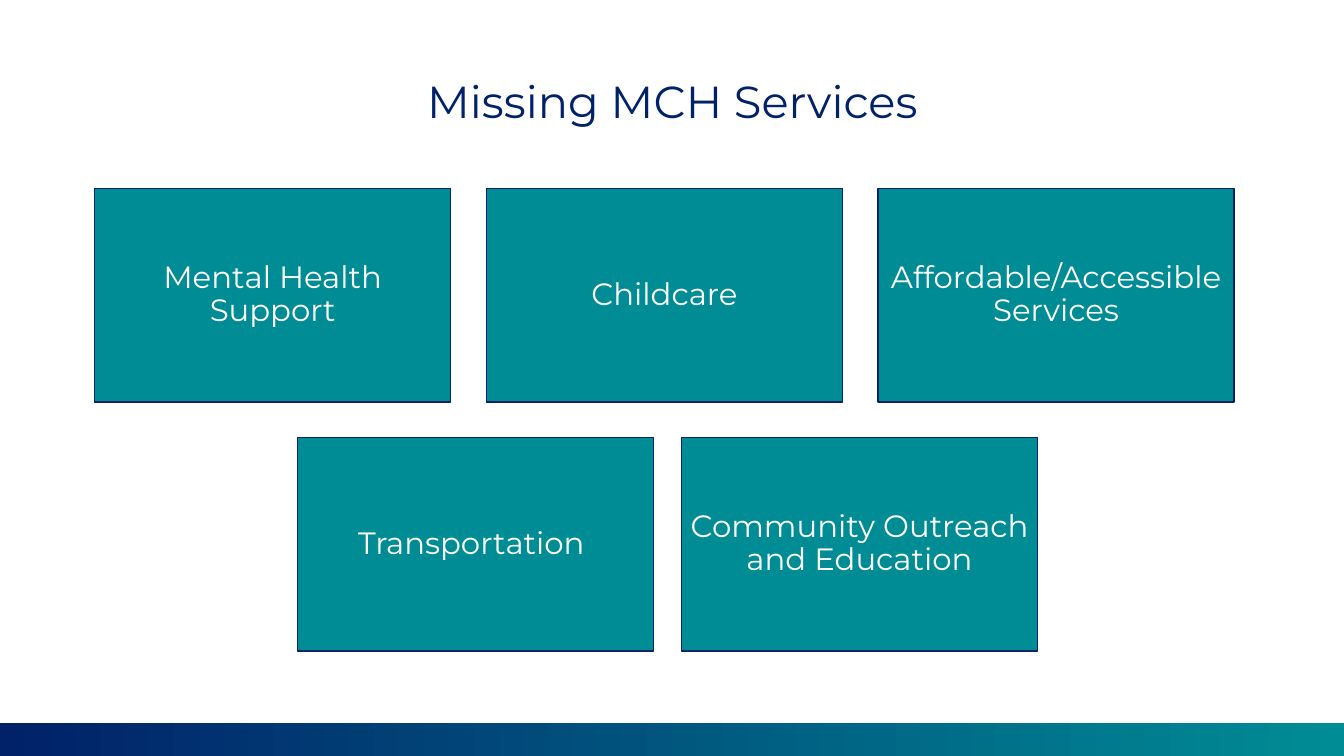
"""Build the slide on missing MCH services."""
from pptx import Presentation
from pptx.dml.color import RGBColor
from pptx.enum import shapes, text
from pptx.util import Inches, Pt

TITLE = "Missing MCH Services"
ROWS = [
    {"left": 0.94, "top": 1.87, "pitch": 3.885,
     "services": ["Mental Health Support", "Childcare", "Affordable/Accessible Services"]},
    {"left": 2.95, "top": 4.34, "pitch": 3.81,
     "services": ["Transportation ", "Community Outreach and Education"]},
]
NAVY, TEAL, WHITE = "012169", "008C95", "FFFFFF"
WIDTH, HEIGHT = 13.33, 7.5
CARD_WIDTH, CARD_HEIGHT = 3.53, 2.12
BAR_HEIGHT = 0.33


def color(value):
    return RGBColor.from_string(value)


def write(box, words, size, ink, inset):
    frame = box.text_frame
    frame.word_wrap = True
    frame.vertical_anchor = text.MSO_ANCHOR.MIDDLE
    frame.margin_left = frame.margin_right = Inches(inset)
    frame.margin_top = frame.margin_bottom = Inches(inset)
    para = frame.paragraphs[0]
    para.alignment = text.PP_ALIGN.CENTER
    para.line_spacing = 0.9
    span = para.add_run()
    span.text = words
    span.font.name = "Montserrat"
    span.font.size = Pt(size)
    span.font.color.rgb = color(ink)


def add_rectangle(page, left, top, width, height):
    box = page.shapes.add_shape(
        shapes.MSO_SHAPE.RECTANGLE, *map(Inches, (left, top, width, height)))
    box.shadow.inherit = False
    return box


def add_card(page, service, left, top):
    card = add_rectangle(page, left, top, CARD_WIDTH, CARD_HEIGHT)
    card.fill.solid()
    card.fill.fore_color.rgb = color(TEAL)
    card.line.color.rgb = color(NAVY)
    card.line.width = Pt(1)
    write(card, service, size=22, ink=WHITE, inset=0.09)


def add_footer_bar(page):
    bar = add_rectangle(page, 0, HEIGHT - BAR_HEIGHT, WIDTH, BAR_HEIGHT)
    bar.line.fill.background()
    bar.fill.gradient()
    bar.fill.gradient_angle = 0
    for stop, shade in zip(bar.fill.gradient_stops, (NAVY, TEAL)):
        stop.color.rgb = color(shade)


def main():
    deck = Presentation()
    deck.slide_width, deck.slide_height = Inches(WIDTH), Inches(HEIGHT)
    page = deck.slides.add_slide(deck.slide_layouts[6])
    title = page.shapes.add_textbox(*map(Inches, (0.92, 0.58, 11.5, 0.91)))
    write(title, TITLE, size=32, ink=NAVY, inset=0.05)
    for row in ROWS:
        for column, service in enumerate(row["services"]):
            add_card(page, service, row["left"] + column * row["pitch"], row["top"])
    add_footer_bar(page)
    deck.save("out.pptx")


if __name__ == "__main__":
    main()
